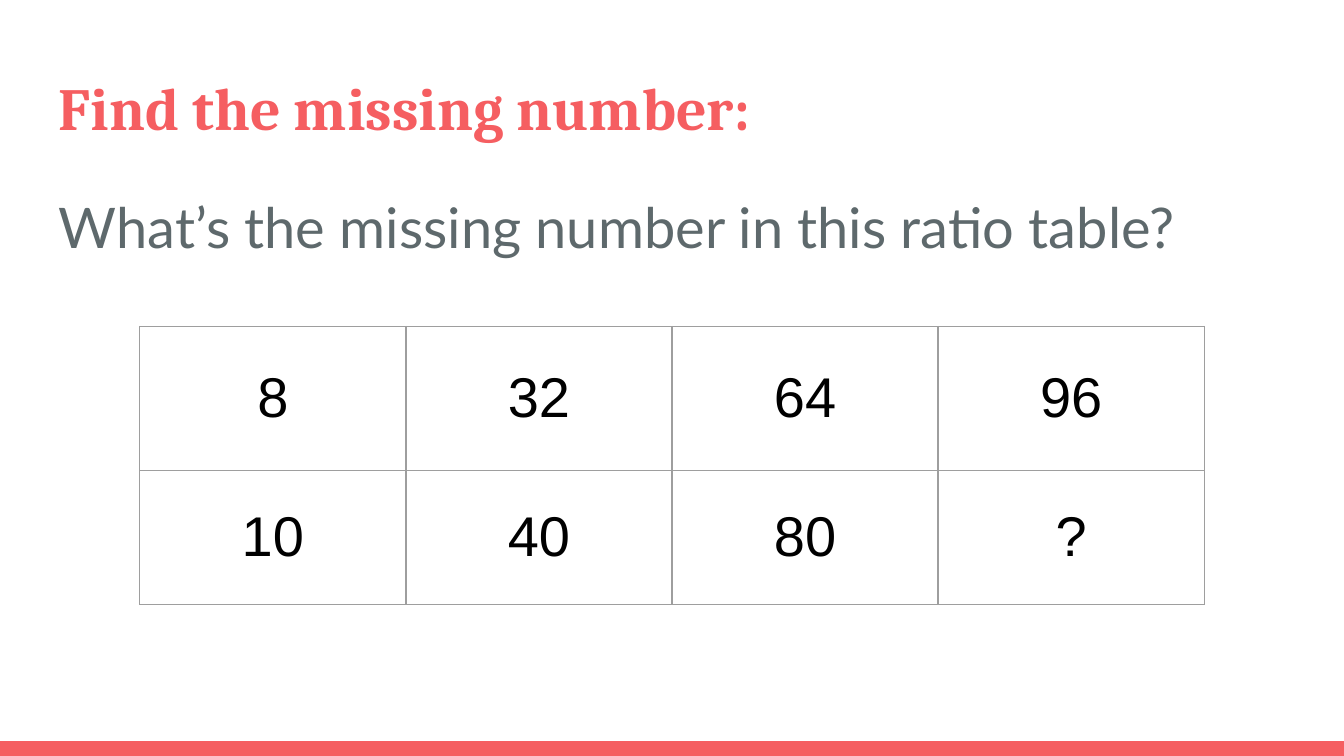
from lxml import etree
from pptx import Presentation, util as u
from pptx.dml.color import RGBColor
from pptx.enum import shapes, text
from pptx.oxml.ns import qn

COLORS = {"coral": "F55E61", "slate": "5E696C", "black": "000000",
          "white": "FFFFFF", "grid": "9E9E9E"}
RATIOS = [["8", "32", "64", "96"],
          ["10", "40", "80", "?"]]

# Widescreen page, 16 to 9
deck = Presentation()
deck.slide_width = u.Inches(10)
deck.slide_height = deck.slide_width * 9 // 16
page = deck.slides.add_slide(deck.slide_layouts[6])
page.background.fill.solid()
page.background.fill.fore_color.rgb = RGBColor.from_string(COLORS["white"])


def write(frame, words, font, size, color, bold=False):
    """Fill a text frame with one styled paragraph and return it."""
    frame.margin_left = frame.margin_right = u.Inches(0.1)
    frame.margin_top = frame.margin_bottom = u.Inches(0.1)
    frame.word_wrap = True
    frame.text = words
    para = frame.paragraphs[0]
    span = para.runs[0]
    span.font.name, span.font.size, span.font.bold = font, u.Pt(size), bold
    span.font.color.rgb = RGBColor.from_string(COLORS[color])
    return para


# Bottom band
band_height = u.Inches(0.11)
band = page.shapes.add_shape(shapes.MSO_SHAPE.RECTANGLE, 0, deck.slide_height - band_height,
                             deck.slide_width, band_height)
band.shadow.inherit = False
band.fill.solid()
band.fill.fore_color.rgb = RGBColor.from_string(COLORS["coral"])
band.line.fill.background()

# Title and question share the same side margins
side = u.Inches(0.34)
text_width = deck.slide_width - 2 * side
title = page.shapes.add_textbox(side, u.Inches(0.43), text_width, u.Inches(0.68))
write(title.text_frame, "Find the missing number:", "Cambria", 32, "coral", bold=True)

question = page.shapes.add_textbox(side, u.Inches(1.26), text_width, u.Inches(3.74))
para = write(question.text_frame, "What’s the missing number in this ratio table?",
             "Lato", 30, "slate")
para.line_spacing = 1.15
para.space_after = u.Pt(16)

# Ratio table, centred across the slide
column_width = u.Inches(1.98)
row_heights = [u.Inches(1.07), u.Inches(1)]
table_width = column_width * len(RATIOS[0])
grid = page.shapes.add_table(len(RATIOS), len(RATIOS[0]),
                             (deck.slide_width - table_width) // 2, u.Inches(2.43),
                             table_width, sum(row_heights)).table
grid.first_row = grid.horz_banding = False
for column in grid.columns:
    column.width = column_width

for r, values in enumerate(RATIOS):
    grid.rows[r].height = row_heights[r]
    for c, value in enumerate(values):
        cell = grid.cell(r, c)
        para = write(cell.text_frame, value, "Arial", 30, "black")
        para.alignment = text.PP_ALIGN.CENTER
        cell.vertical_anchor = text.MSO_ANCHOR.MIDDLE
        cell.margin_left = cell.margin_right = u.Inches(0.1)
        cell.margin_top = cell.margin_bottom = u.Inches(0.1)
        # Cell borders come before the fill in the cell properties
        for edge in ("a:lnL", "a:lnR", "a:lnT", "a:lnB"):
            line = etree.SubElement(cell._tc.get_or_add_tcPr(), qn(edge), w=str(u.Pt(0.75)))
            paint = etree.SubElement(line, qn("a:solidFill"))
            etree.SubElement(paint, qn("a:srgbClr"), val=COLORS["grid"])
        cell.fill.background()

deck.save("out.pptx")
